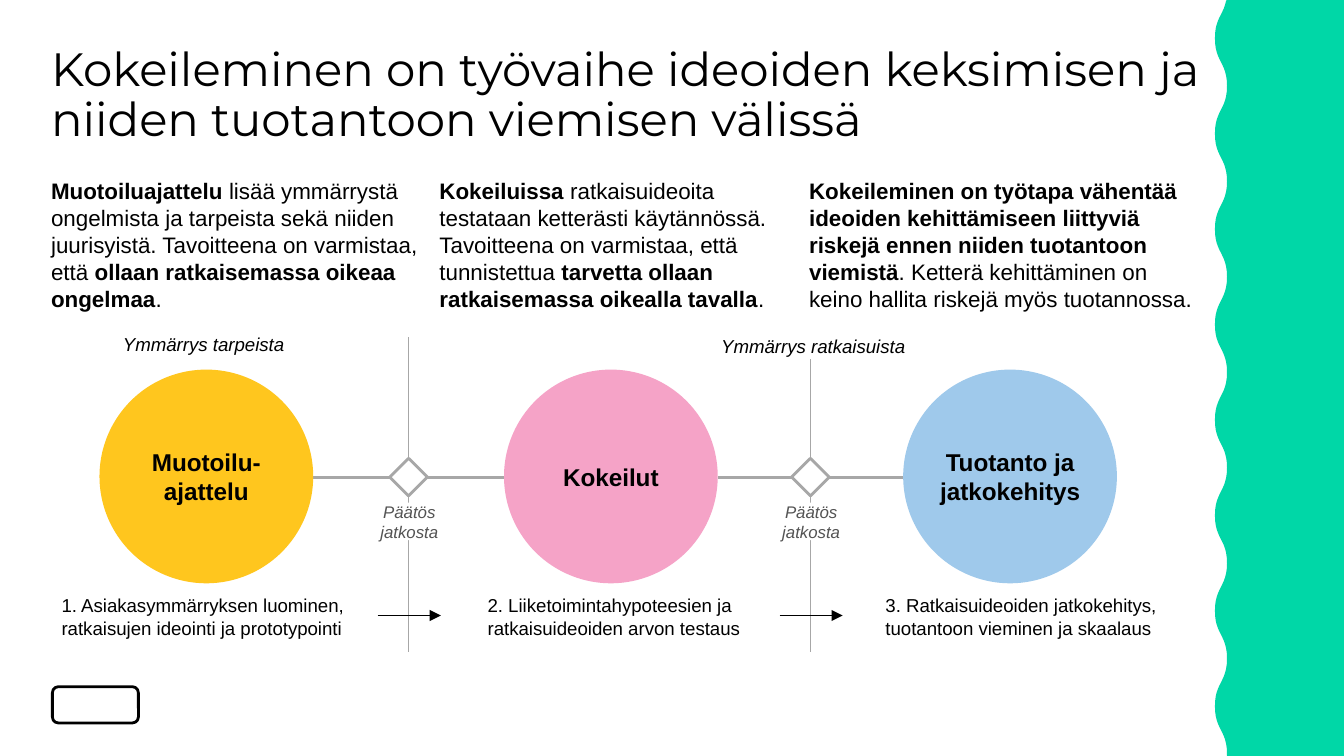
from lxml import etree
from pptx import Presentation
from pptx.dml.color import RGBColor
from pptx.enum.shapes import MSO_CONNECTOR as Connector, MSO_SHAPE as Shape
from pptx.enum.text import MSO_ANCHOR as Anchor, MSO_AUTO_SIZE as AutoSize, PP_ALIGN as Align
from pptx.oxml.ns import qn
from pptx.util import Inches, Pt

WIDTH = 10
HEIGHT = WIDTH * 9 / 16
BLACK, WHITE, GRAY, DARK_GRAY, GREEN = "000000", "FFFFFF", "A7A7A7", "535353", "00D7A7"
CIRCLE_SIZE, CIRCLE_TOP = 1.59, 2.75
AXIS = 3.55

STAGES = [
    dict(left=0.74, color="FFC61E", name="Muotoilu-\vajattelu",
         intro_box=(0.38, 2.75),
         intro=["Muotoiluajattelu ",
                "lisää ymmärrystä ongelmista ja tarpeista sekä niiden juurisyistä. "
                "Tavoitteena on varmistaa, että ",
                "ollaan ratkaisemassa oikeaa ongelmaa", "."],
         step_box=(0.36, 2.36),
         step="1. Asiakasymmärryksen luominen, ratkaisujen ideointi ja prototypointi"),
    dict(left=3.75, color="F5A3C7", name="Kokeilut",
         intro_box=(3.27, 2.6),
         intro=["Kokeiluissa ",
                "ratkaisuideoita testataan ketterästi käytännössä. "
                "Tavoitteena on varmistaa, että tunnistettua ",
                "tarvetta ollaan ratkaisemassa oikealla tavalla", "."],
         step_box=(3.53, 2.47),
         step="2. Liiketoimintahypoteesien ja ratkaisuideoiden arvon testaus"),
    dict(left=6.72, color="9FC9EB", name="Tuotanto ja jatkokehitys",
         intro_box=(6.02, 2.91),
         intro=["Kokeileminen on työtapa vähentää ideoiden kehittämiseen liittyviä "
                "riskejä ennen niiden tuotantoon viemistä",
                ". Ketterä kehittäminen on keino hallita riskejä myös tuotannossa."],
         step_box=(6.49, 2.36),
         step="3. Ratkaisuideoiden jatkokehitys, tuotantoon vieminen ja skaalaus"),
]


def rgb(color):
    return RGBColor.from_string(color)


def style_runs(paragraph, size, color=BLACK, bold=False, italic=False, font="Arial"):
    for run in paragraph.runs:
        run.font.name = font
        run.font.size = Pt(size)
        run.font.color.rgb = rgb(color)
        run.font.bold = bold
        run.font.italic = italic


def set_frame(text_frame, side=0.1, edge=0.1, anchor=Anchor.TOP):
    text_frame.word_wrap = True
    text_frame.auto_size = AutoSize.NONE
    text_frame.vertical_anchor = anchor
    text_frame.margin_left = text_frame.margin_right = Inches(side)
    text_frame.margin_top = text_frame.margin_bottom = Inches(edge)


def write(shape, text, size, align=Align.LEFT, side=0.1, anchor=Anchor.TOP, **style):
    set_frame(shape.text_frame, side, anchor=anchor)
    shape.text_frame.text = text
    paragraph = shape.text_frame.paragraphs[0]
    paragraph.alignment = align
    style_runs(paragraph, size, **style)


def add_text_box(slide, box):
    return slide.shapes.add_textbox(*map(Inches, box))


def paint(shape, fill, line=None, weight=1.5):
    shape.shadow.inherit = False
    shape.fill.solid()
    shape.fill.fore_color.rgb = rgb(fill)
    if line:
        shape.line.color.rgb = rgb(line)
        shape.line.width = Pt(weight)
    else:
        shape.line.fill.background()


def add_shape(slide, kind, box, fill, line=None):
    shape = slide.shapes.add_shape(kind, *map(Inches, box))
    paint(shape, fill, line)
    return shape


def add_line(slide, start, end, color, weight, arrow=False):
    line = slide.shapes.add_connector(Connector.STRAIGHT, *map(Inches, start + end))
    line.line.color.rgb = rgb(color)
    line.line.width = Pt(weight)
    properties = line._element.spPr
    if arrow:
        etree.SubElement(properties.get_or_add_ln(), qn("a:tailEnd"), type="triangle")
    etree.SubElement(properties, qn("a:effectLst"))


def add_wave(slide, left, top, right, bottom):
    depth, half_period, steps = 0.09, 0.355, 12
    crest = top - 0.07
    points = []
    for half in range(16):
        for step in range(steps):
            t = step / steps
            ease = 3 * t**2 - 2 * t**3
            x = left + depth * (ease if half % 2 else 1 - ease)
            y = crest + half_period * (half + 1.5 * t * (1 - t) + t**3)
            if top <= y <= bottom:
                points.append((Inches(x), Inches(y)))
    points += [(Inches(left + depth), Inches(bottom)),
               (Inches(right), Inches(bottom)), (Inches(right), Inches(top))]
    builder = slide.shapes.build_freeform(Inches(left + depth), Inches(top))
    builder.add_line_segments(points, close=True)
    paint(builder.convert_to_shape(), GREEN)


def add_title(slide, box):
    title = slide.shapes.title
    title.left, title.top, title.width, title.height = map(Inches, box)
    set_frame(title.text_frame, 0, 0)
    title.text_frame.text = ("Kokeileminen on työvaihe ideoiden keksimisen ja "
                             "niiden tuotantoon viemisen välissä")
    paragraph = title.text_frame.paragraphs[0]
    paragraph.alignment = Align.LEFT
    paragraph.line_spacing = 0.9
    style_runs(paragraph, 25, font="Montserrat")


def add_stage(slide, stage):
    left, width = stage["intro_box"]
    intro = add_text_box(slide, (left, 1.22, width, 1.11))
    set_frame(intro.text_frame, side=0)
    paragraph = intro.text_frame.paragraphs[0]
    for text in stage["intro"]:
        paragraph.add_run().text = text
    style_runs(paragraph, 12)
    for run in paragraph.runs[::2]:
        run.font.bold = True

    circle = add_shape(slide, Shape.OVAL,
                       (stage["left"], CIRCLE_TOP, CIRCLE_SIZE, CIRCLE_SIZE), stage["color"])
    write(circle, stage["name"], 13, Align.CENTER, side=0, anchor=Anchor.MIDDLE, bold=True)

    left, width = stage["step_box"]
    write(add_text_box(slide, (left, 4.32, width, 0.51)), stage["step"], 10)


def add_gate(slide, center, left, right):
    size = 0.28
    add_line(slide, (center, 2.51), (center, 4.85), GRAY, 0.75)
    add_line(slide, (left, AXIS), (right, AXIS), GRAY, 1.5)
    add_line(slide, (center - 0.23, 4.58), (center + 0.24, 4.58), BLACK, 0.75, arrow=True)
    add_shape(slide, Shape.DIAMOND,
              (center - size / 2, AXIS - size / 2, size, size), WHITE, GRAY)
    label = add_shape(slide, Shape.RECTANGLE, (center - 0.49, 3.74, 0.99, 0.28), WHITE)
    write(label, "Päätös jatkosta", 9, Align.CENTER, anchor=Anchor.MIDDLE,
          color=DARK_GRAY, italic=True)


def add_insights(slide):
    needs = add_text_box(slide, (0.7, 2.38, 1.63, 0.28))
    write(needs, "Ymmärrys tarpeista", 10, Align.CENTER, italic=True)
    solutions = add_shape(slide, Shape.RECTANGLE, (3.77, 2.39, 4.56, 0.28), WHITE)
    write(solutions, "Ymmärrys ratkaisuista", 10, Align.CENTER, italic=True)


def main():
    presentation = Presentation()
    presentation.slide_width, presentation.slide_height = Inches(WIDTH), Inches(HEIGHT)
    slide = presentation.slides.add_slide(presentation.slide_layouts[5])
    add_wave(slide, 9.04, 0, WIDTH, HEIGHT)
    add_shape(slide, Shape.ROUNDED_RECTANGLE, (0.39, 5.11, 0.64, 0.27), WHITE, BLACK)
    add_title(slide, (0.38, 0.34, 9.22, 0.65))
    for center, before, after in zip((3.04, 6.03), STAGES, STAGES[1:]):
        add_gate(slide, center, before["left"] + CIRCLE_SIZE, after["left"])
    add_insights(slide)
    for stage in STAGES:
        add_stage(slide, stage)
    presentation.save("out.pptx")


if __name__ == "__main__":
    main()
